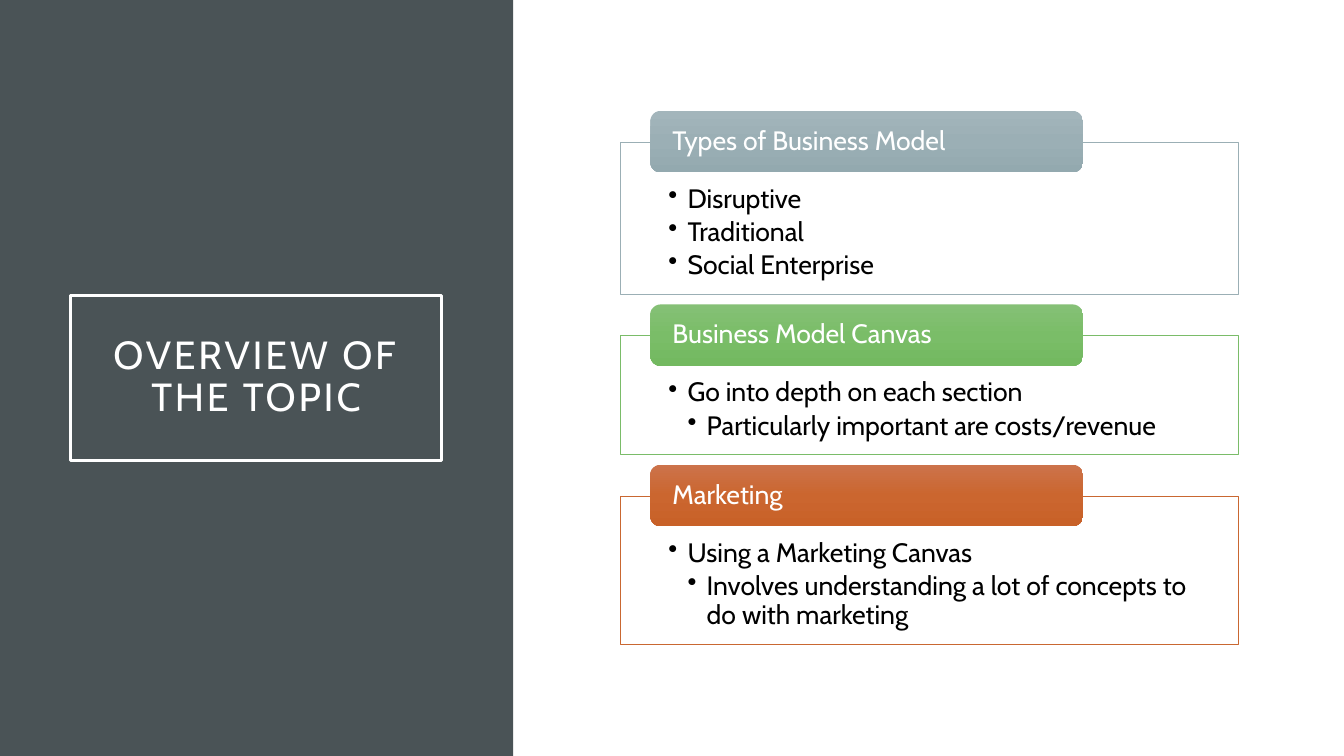
from copy import deepcopy

from lxml import etree
from pptx import Presentation
from pptx.dml.color import RGBColor
from pptx.enum.shapes import MSO_SHAPE
from pptx.enum.text import MSO_ANCHOR, MSO_AUTO_SIZE, PP_ALIGN
from pptx.oxml.ns import qn
from pptx.util import Inches, Pt

RECTANGLE, ROUNDED = MSO_SHAPE.RECTANGLE, MSO_SHAPE.ROUNDED_RECTANGLE
TOP, MIDDLE = MSO_ANCHOR.TOP, MSO_ANCHOR.MIDDLE
LEFT, CENTER = PP_ALIGN.LEFT, PP_ALIGN.CENTER
NO_AUTOFIT = MSO_AUTO_SIZE.NONE

FONT = "Cabin"
WHITE, BLACK, SLATE = "FFFFFF", "000000", "4A5356"
TITLE_ONLY = 5
PANEL_GAP = 0.41
TAB_INDENT, TAB_RISE, TAB_HEIGHT, TAB_SHARE = 0.3, 0.31, 0.61, 0.7
BULLET_INDENT = 0.19

# heading, panel height, border colour, tab gradient, (level, text) points
TOPICS = [
    ("Types of Business Model", 1.51, "9BAFB5", ("A3B5BB", "9BAFB5", "93A9AF"),
     [(1, "Disruptive"), (1, "Traditional"), (1, "Social Enterprise")]),
    ("Business Model Canvas", 1.18, "7ABC69", ("85C076", "7ABD68", "73B960"),
     [(1, "Go into depth on each section"),
      (2, "Particularly important are costs/revenue")]),
    ("Marketing", 1.47, "C96731", ("CC734B", "CB662F", "C86128"),
     [(1, "Using a Marketing Canvas"),
      (2, "Involves understanding a lot of concepts to do with marketing")]),
]


def rgb(hex_colour):
    return RGBColor.from_string(hex_colour)


def set_attributes(target, values):
    for name, value in values.items():
        setattr(target, name, value)


def add_block(slide, preset, box):
    block = slide.shapes.add_shape(preset, *map(Inches, box))
    block.shadow.inherit = False
    block.line.fill.background()
    return block


def set_border(shape, colour, width):
    shape.line.color.rgb = rgb(colour)
    shape.line.width = Pt(width)


def set_frame(shape, anchor, insets):
    """Insets are left, top, right, bottom in inches."""
    left, top, right, bottom = map(Inches, insets)
    set_attributes(shape.text_frame, {
        "word_wrap": True, "auto_size": NO_AUTOFIT, "vertical_anchor": anchor,
        "margin_left": left, "margin_top": top,
        "margin_right": right, "margin_bottom": bottom})


def write(paragraph, text, size, colour, align=LEFT, after=0):
    set_attributes(paragraph, {"alignment": align, "line_spacing": 0.9,
                               "space_before": Pt(0), "space_after": Pt(after)})
    run = paragraph.add_run()
    run.text = text
    set_attributes(run.font, {"name": FONT, "size": Pt(size)})
    run.font.color.rgb = rgb(colour)
    return run


def add_bullet(paragraph, level):
    properties = paragraph._p.get_or_add_pPr()
    properties.set("lvl", str(level))
    properties.set("marL", str(Inches(BULLET_INDENT * level)))
    properties.set("indent", str(-Inches(BULLET_INDENT)))
    etree.SubElement(properties, qn("a:buChar")).set("char", "•")


def fill_downward(shape, colours):
    """Fill with evenly spaced gradient stops from top to bottom."""
    shape.fill.gradient()
    shape.fill.gradient_angle = 270
    stop_list = shape.fill._fill._gradFill.find(qn("a:gsLst"))
    stop_list.insert(1, deepcopy(stop_list[0]))
    for index, (stop, colour) in enumerate(zip(shape.fill.gradient_stops, colours)):
        stop.color.rgb = rgb(colour)
        stop.position = index / (len(colours) - 1)


def add_sidebar(slide, box):
    left, top, width, height = box
    sidebar = add_block(slide, RECTANGLE, box)
    sidebar.fill.solid()
    sidebar.fill.fore_color.rgb = rgb(SLATE)
    slide.shapes._spTree.insert(2, sidebar._element)  # behind the title

    title = slide.shapes.title
    set_attributes(title, {"left": Inches(left + 0.7), "top": Inches(top + 2.93),
                           "width": Inches(width - 1.41), "height": Inches(1.64)})
    set_border(title, WHITE, 2.5)
    set_frame(title, MIDDLE, [0.2] * 4)
    run = write(title.text_frame.paragraphs[0], "OVERVIEW OF THE TOPIC",
                28, WHITE, CENTER)
    run.font._element.set("spc", "200")


def add_topic(slide, box, heading, border, gradient, points):
    left, top, width, _ = box
    panel = add_block(slide, RECTANGLE, box)
    panel.fill.solid()
    panel.fill.fore_color.rgb = rgb(WHITE)
    white = panel._element.spPr.find(qn("a:solidFill"))[0]
    etree.SubElement(white, qn("a:alpha")).set("val", "90000")
    set_border(panel, border, 0.5)
    set_frame(panel, TOP, (0.48, 0.43, 0.48, 0.15))
    frame = panel.text_frame
    for index, (level, text) in enumerate(points):
        paragraph = frame.add_paragraph() if index else frame.paragraphs[0]
        write(paragraph, text, 19, BLACK, after=3.2)
        add_bullet(paragraph, level)

    tab = add_block(slide, ROUNDED, (left + TAB_INDENT, top - TAB_RISE,
                                     width * TAB_SHARE, TAB_HEIGHT))
    fill_downward(tab, gradient)
    set_frame(tab, MIDDLE, (0.19, 0, 0.19, 0))
    write(tab.text_frame.paragraphs[0], heading, 19, WHITE)


def add_topics(slide, left, top, width):
    for heading, height, border, gradient, points in TOPICS:
        add_topic(slide, (left, top, width, height),
                  heading, border, gradient, points)
        top += height + PANEL_GAP


def main():
    deck = Presentation()
    deck.slide_width, deck.slide_height = Inches(13.33), Inches(7.5)
    slide = deck.slides.add_slide(deck.slide_layouts[TITLE_ONLY])
    add_sidebar(slide, (0, 0, 5.09, 7.5))
    add_topics(slide, 6.15, 1.41, 6.13)
    deck.save("out.pptx")


if __name__ == "__main__":
    main()
